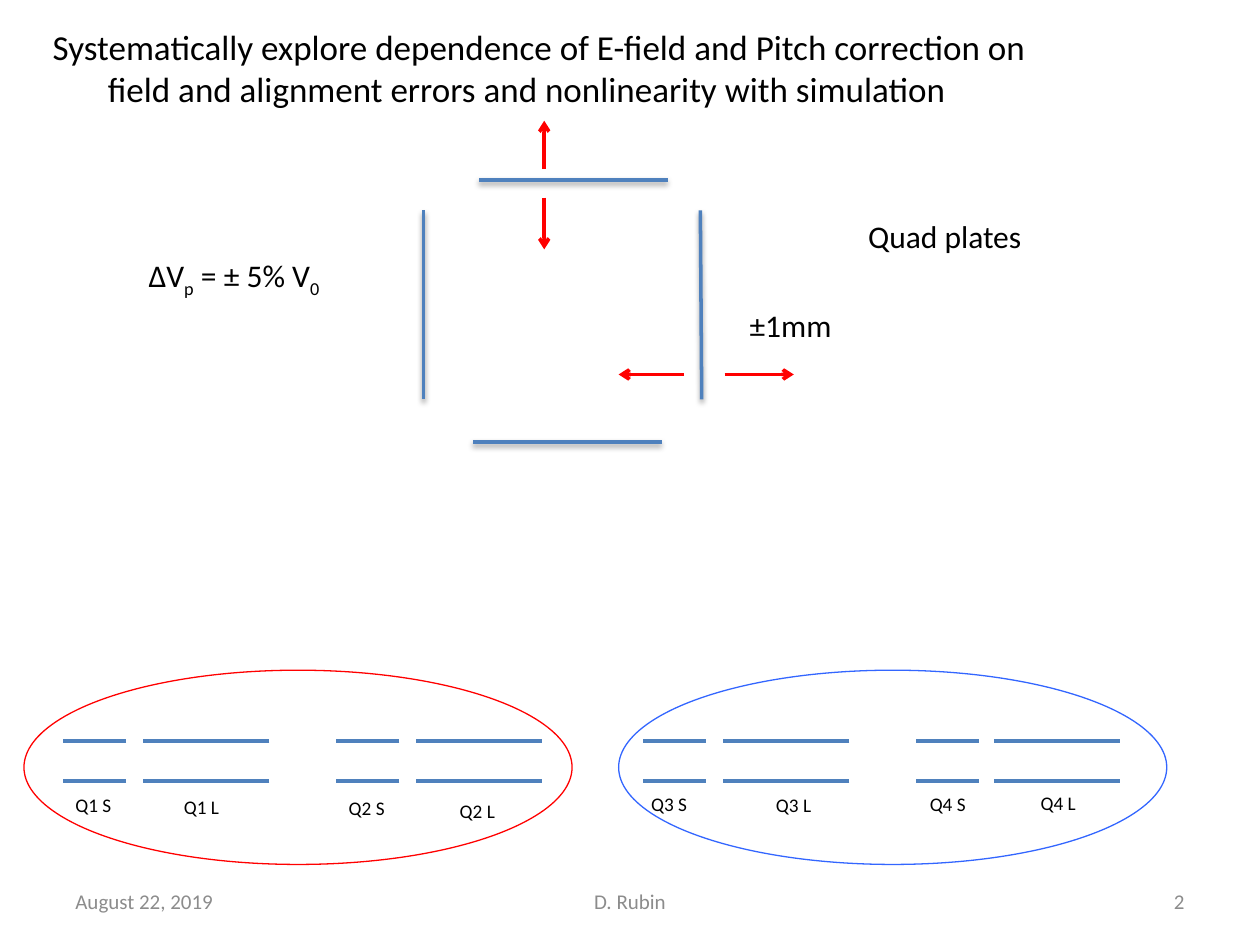
from lxml import etree
from pptx import Presentation
from pptx.dml.color import RGBColor
from pptx.enum.shapes import MSO_CONNECTOR, MSO_SHAPE
from pptx.enum.text import MSO_ANCHOR, MSO_AUTO_SIZE, PP_ALIGN
from pptx.oxml.ns import qn
from pptx.util import Pt

STRAIGHT = MSO_CONNECTOR.STRAIGHT
OVAL = MSO_SHAPE.OVAL
TOP, MIDDLE = MSO_ANCHOR.TOP, MSO_ANCHOR.MIDDLE
LEFT, CENTER, RIGHT = PP_ALIGN.LEFT, PP_ALIGN.CENTER, PP_ALIGN.RIGHT
FIT_SHAPE, FIT_NONE = MSO_AUTO_SIZE.SHAPE_TO_FIT_TEXT, MSO_AUTO_SIZE.NONE

BLACK = RGBColor(0x00, 0x00, 0x00)
GREY = RGBColor(0x8C, 0x8C, 0x8C)
RED = RGBColor(0xFF, 0x00, 0x00)
BLUE = RGBColor(0x33, 0x66, 0xFF)
PLATE_BLUE = RGBColor(0x4F, 0x81, 0xBD)


class SlideBuilder:
    font_name = "Calibri"
    line_width = 2

    def __init__(self, slide):
        self.slide = slide

    def text(self, box, paragraphs, size, color=BLACK, wrap=False,
             align=LEFT, anchor=TOP, fit=FIT_SHAPE):
        """Each paragraph is a list of (text, is_subscript) runs."""
        frame = self.slide.shapes.add_textbox(*map(Pt, box)).text_frame
        frame.word_wrap = wrap
        frame.auto_size = fit
        frame.vertical_anchor = anchor
        for number, runs in enumerate(paragraphs):
            paragraph = frame.add_paragraph() if number else frame.paragraphs[0]
            paragraph.alignment = align
            paragraph.font.name = self.font_name
            paragraph.font.size = Pt(size)
            paragraph.font.color.rgb = color
            for words, is_subscript in runs:
                run = paragraph.add_run()
                run.text = words
                if is_subscript:
                    run.font._element.set("baseline", "-25000")
        return frame

    def label(self, box, words, size, **style):
        return self.text(box, [[(words, False)]], size, **style)

    def line(self, start, end, color):
        """Draw a line and return it with its empty effect list."""
        connector = self.slide.shapes.add_connector(
            STRAIGHT, *map(Pt, (*start, *end)))
        connector.line.color.rgb = color
        connector.line.width = Pt(self.line_width)
        effects = etree.SubElement(connector._element.spPr, qn("a:effectLst"))
        return connector, effects

    def arrow(self, start, end):
        connector, _ = self.line(start, end, RED)
        etree.SubElement(connector.line._get_or_add_ln(), qn("a:tailEnd"),
                         type="arrow")

    def plate(self, start, end, shadow=False):
        _, effects = self.line(start, end, PLATE_BLUE)
        if shadow:
            outer = etree.SubElement(
                effects, qn("a:outerShdw"), blurRad=str(Pt(3.1)),
                dist=str(Pt(1.6)), dir="5400000", rotWithShape="0")
            tint = etree.SubElement(outer, qn("a:srgbClr"), val="000000")
            etree.SubElement(tint, qn("a:alpha"), val="38000")

    def ellipse(self, box, color):
        oval = self.slide.shapes.add_shape(OVAL, *map(Pt, box))
        oval.shadow.inherit = False
        oval.fill.background()
        oval.line.color.rgb = color
        oval.line.width = Pt(0.75)


def main():
    deck = Presentation()
    deck.slide_width, deck.slide_height = Pt(720), Pt(540)
    page = SlideBuilder(deck.slides.add_slide(deck.slide_layouts[6]))

    # Title, second line indented
    title = page.text(
        (23, 10.8, 661, 80),
        [[("Systematically explore dependence of E-field and Pitch correction on", False)],
         [("field and alignment errors and nonlinearity with simulation", False)]],
        20, wrap=True)
    title.paragraphs[1]._p.get_or_add_pPr().set("marL", str(Pt(31.6)))

    # Cross-section of the four quad plates
    for start, end in (((242, 120.3), (242, 228.3)),
                       ((400.2, 120.3), (401, 228.3)),
                       ((381.6, 103), (273.6, 103)),
                       ((378, 252.7), (270, 252.7))):
        page.plate(start, end, shadow=True)

    # Plate displacements
    for start, end in (((414, 214), (453.6, 214)),
                       ((391, 214), (353.5, 214)),
                       ((311, 96.5), (311, 69)),
                       ((311, 113), (311, 142.5))):
        page.arrow(start, end)

    # Captions and voltage error
    page.label((489, 120.3, 104, 29), "Quad plates", 18)
    page.label((421.2, 171.4, 62, 29), "±1mm", 18)
    page.text((77.8, 142.6, 114.5, 29),
              [[("ΔV", False), ("p", True), (" = ± 5% V", False), ("0", True)]], 18)

    # Short and long plate pairs: quad, short left, long left, label corners
    quads = (("Q1", 36, 82, (36, 450), (98, 450.7)),
             ("Q2", 192.2, 237.6, (192.2, 451.4), (255.6, 452.9)),
             ("Q3", 367.2, 413.3, (365, 449.3), (436.3, 450)),
             ("Q4", 523.4, 568, (524.2, 449.3), (587.5, 448.6)))
    for quad, short_left, long_left, short_label, long_label in quads:
        for kind, left, length, corner in (("S", short_left, 36, short_label),
                                           ("L", long_left, 72, long_label)):
            for y in (423.3, 446.4):
                page.plate((left + length, y), (left, y))
            page.label((*corner, 35, 21), f"{quad} {kind}", 11)

    # Quad groups
    for left, color in ((13.7, RED), (353.5, BLUE)):
        page.ellipse((left, 383, 313.2, 111), color)

    # Footer
    for left, width, words, align in ((36, 168, "August 22, 2019", LEFT),
                                      (246, 228, "D. Rubin", CENTER),
                                      (516, 168, "2", RIGHT)):
        page.label((left, 500.5, width, 28.8), words, 12, color=GREY, wrap=True,
                   align=align, anchor=MIDDLE, fit=FIT_NONE)

    deck.save("out.pptx")


if __name__ == "__main__":
    main()
